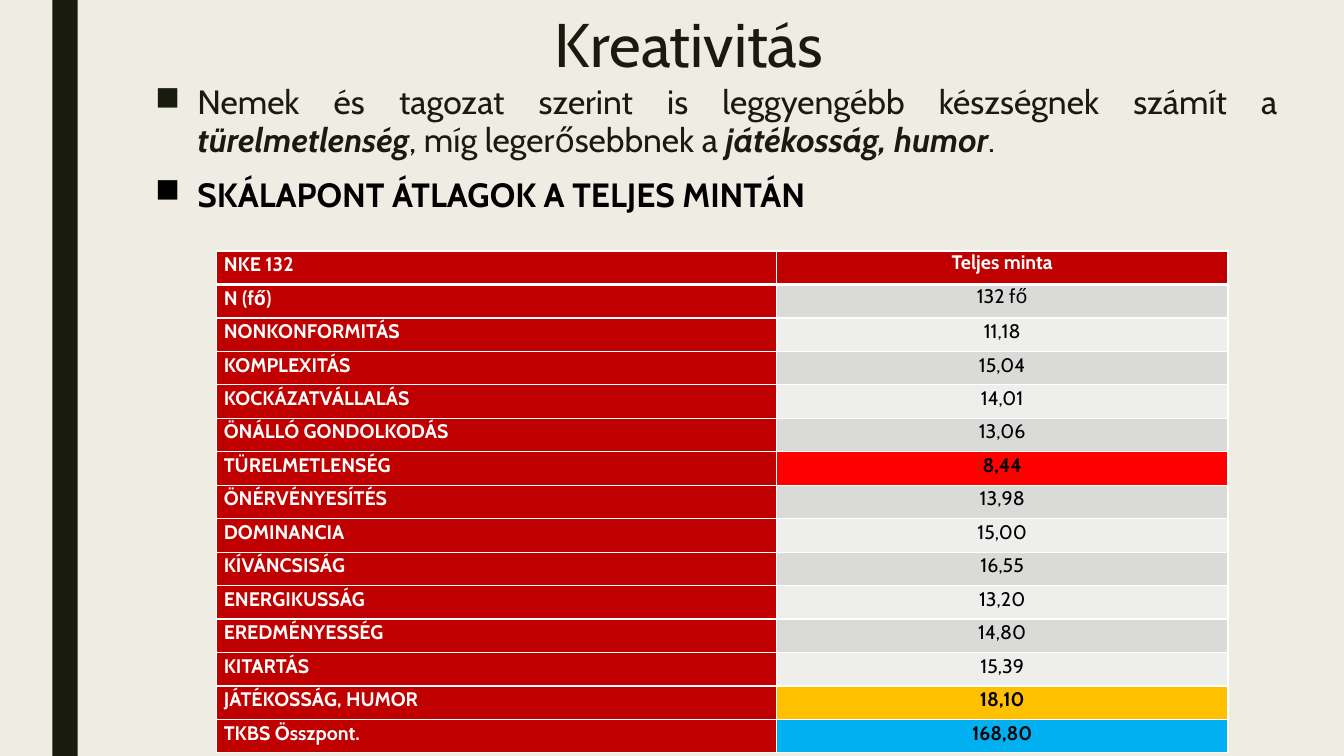
from lxml import etree
from pptx import Presentation
from pptx.dml.color import RGBColor
from pptx.enum import shapes, text
from pptx.oxml.ns import qn
from pptx.util import Inches, Pt

FONT = "Cabin"
CREAM = RGBColor(0xEF, 0xED, 0xE3)
DARK = RGBColor(0x19, 0x1B, 0x0E)
BLACK = RGBColor(0x00, 0x00, 0x00)
WHITE = RGBColor(0xFF, 0xFF, 0xFF)
CRIMSON = RGBColor(0xC0, 0x00, 0x00)
BANDS = [RGBColor(0xEE, 0xEE, 0xED), RGBColor(0xDA, 0xDB, 0xD9)]
HIGHLIGHTS = {
    "TÜRELMETLENSÉG": RGBColor(0xFF, 0x00, 0x00),
    "JÁTÉKOSSÁG, HUMOR": RGBColor(0xFF, 0xC0, 0x00),
    "TKBS Összpont.": RGBColor(0x00, 0xB0, 0xF0),
}
SCORES = [
    ("NKE 132", "Teljes minta"),
    ("N (fő)", "132 fő"),
    ("NONKONFORMITÁS", "11,18"),
    ("KOMPLEXITÁS", "15,04"),
    ("KOCKÁZATVÁLLALÁS", "14,01"),
    ("ÖNÁLLÓ GONDOLKODÁS", "13,06"),
    ("TÜRELMETLENSÉG", "8,44"),
    ("ÖNÉRVÉNYESÍTÉS", "13,98"),
    ("DOMINANCIA", "15,00"),
    ("KÍVÁNCSISÁG", "16,55"),
    ("ENERGIKUSSÁG", "13,20"),
    ("EREDMÉNYESSÉG", "14,80"),
    ("KITARTÁS", "15,39"),
    ("JÁTÉKOSSÁG, HUMOR", "18,10"),
    ("TKBS Összpont.", "168,80"),
]


def set_font(paragraph, size, color, bold=None):
    font = paragraph.font
    font.name, font.size, font.bold = FONT, Pt(size), bold
    font.color.rgb = color


def set_borders(cell, bottom_width):
    properties = cell._tc.get_or_add_tcPr()
    for position, side in enumerate(("lnL", "lnR", "lnT", "lnB")):
        width = bottom_width if side == "lnB" else 1
        line = etree.Element(qn(f"a:{side}"), w=str(Pt(width)))
        fill = etree.SubElement(line, qn("a:solidFill"))
        etree.SubElement(fill, qn("a:srgbClr"), val=str(WHITE))
        properties.insert(position, line)


prs = Presentation()
prs.slide_width, prs.slide_height = Inches(13.33), Inches(7.5)
slide = prs.slides.add_slide(prs.slide_layouts[6])
slide.background.fill.solid()
slide.background.fill.fore_color.rgb = CREAM

# Dark stripe on the left
stripe = slide.shapes.add_shape(
    shapes.MSO_SHAPE.RECTANGLE, Inches(0.52), 0, Inches(0.25), Inches(7.5))
stripe.shadow.inherit = False
stripe.fill.solid()
stripe.fill.fore_color.rgb = DARK
stripe.line.fill.background()

# Title
title = slide.shapes.add_textbox(
    Inches(1.96), Inches(0.1), Inches(9.75), Inches(1.04)).text_frame
title.word_wrap = True
heading = title.paragraphs[0]
heading.text = "Kreativitás"
heading.alignment = text.PP_ALIGN.CENTER
heading.line_spacing = 0.89
set_font(heading, 44, DARK)

# Bulleted statements
statements = slide.shapes.add_textbox(
    Inches(1.44), Inches(0.79), Inches(11.33), Inches(5.86)).text_frame
statements.word_wrap = True
finding = statements.paragraphs[0]
for words, emphasised in (
    ("Nemek és tagozat szerint is leggyengébb készségnek számít a ", False),
    ("türelmetlenség", True),
    (", míg legerősebbnek a ", False),
    ("játékosság, humor", True),
    (".", False),
):
    run = finding.add_run()
    run.text = words
    run.font.bold = run.font.italic = emphasised
set_font(finding, 24, DARK)
table_heading = statements.add_paragraph()
table_heading.text = "SKÁLAPONT ÁTLAGOK A TELJES MINTÁN"
set_font(table_heading, 24, BLACK, True)
for statement in (finding, table_heading):
    statement.alignment = text.PP_ALIGN.JUSTIFY
    statement.line_spacing = 0.94
    statement.space_before, statement.space_after = Pt(10), Pt(2)
    properties = statement._p.get_or_add_pPr()
    properties.set("marL", str(Inches(0.42)))
    properties.set("indent", str(-Inches(0.42)))
    bullet = etree.Element(qn("a:buChar"), char="■")
    properties.find(qn("a:spcAft")).addnext(bullet)

# Score table
scores = slide.shapes.add_table(
    len(SCORES), 2, Inches(2.15), Inches(2.49), Inches(10.03), Inches(4.98)).table
scores.columns[0].width, scores.columns[1].width = Inches(5.55), Inches(4.48)
for row, (scale, score) in enumerate(SCORES):
    scores.rows[row].height = Inches(4.98 / len(SCORES))
    for column, content in enumerate((scale, score)):
        is_label = row == 0 or column == 0
        cell = scores.cell(row, column)
        cell.margin_left = cell.margin_right = Inches(0.07)
        cell.margin_top = cell.margin_bottom = 0
        cell.fill.solid()
        cell.fill.fore_color.rgb = (
            CRIMSON if is_label else HIGHLIGHTS.get(scale, BANDS[row % 2]))
        set_borders(cell, 3 if row == 0 else 1)
        entry = cell.text_frame.paragraphs[0]
        entry.text = content
        entry.alignment = text.PP_ALIGN.CENTER if column else text.PP_ALIGN.JUSTIFY
        if column == 0 or row > 1:
            entry.line_spacing, entry.space_after = 1.07, Pt(8)
        set_font(entry, 14, WHITE if is_label else BLACK,
                 is_label or scale in HIGHLIGHTS)

prs.save("out.pptx")
